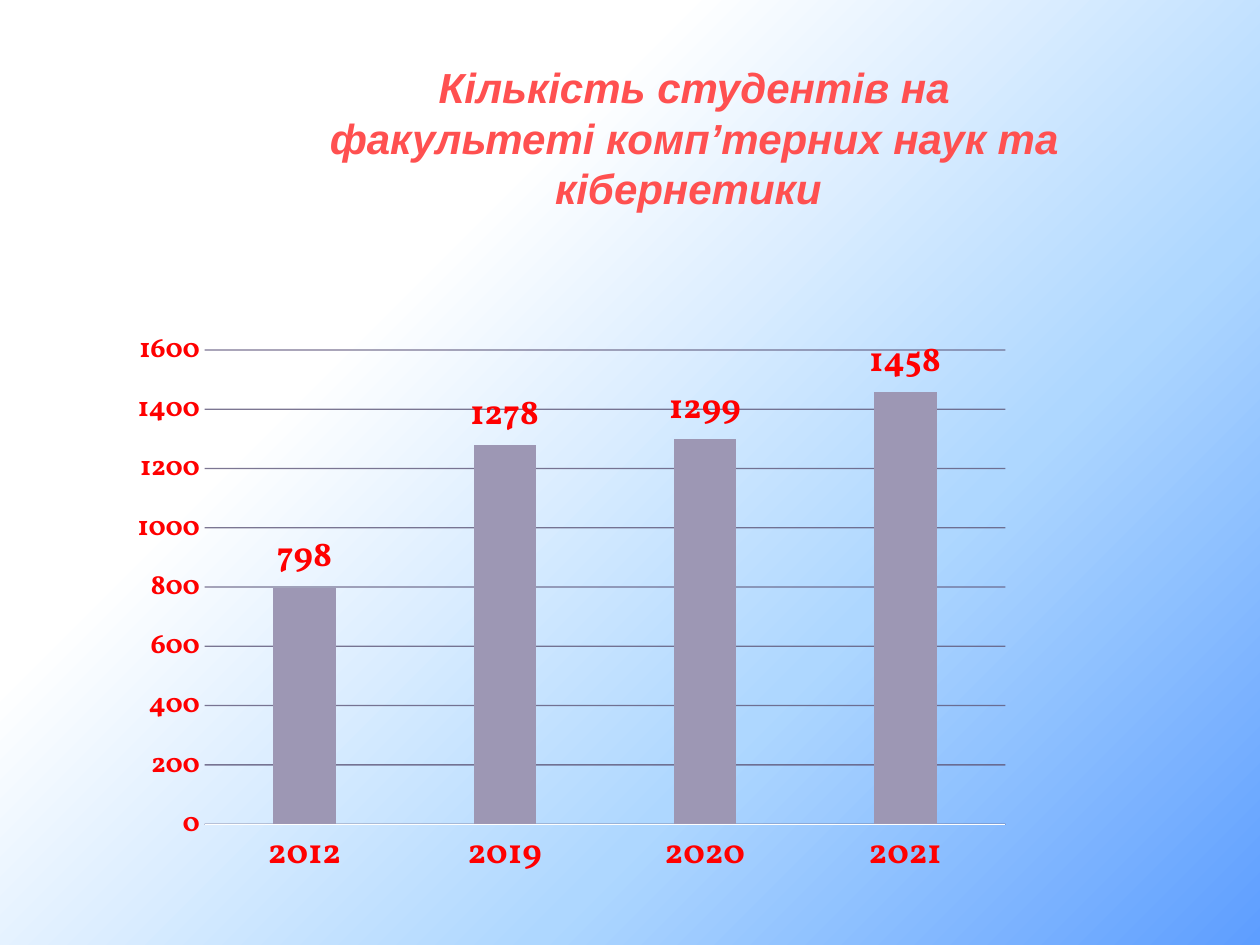
from lxml import etree
from pptx import Presentation
from pptx.chart.data import CategoryChartData
from pptx.dml.color import RGBColor
from pptx.enum.chart import XL_CHART_TYPE, XL_LABEL_POSITION, XL_TICK_MARK
from pptx.enum.text import MSO_ANCHOR, MSO_AUTO_SIZE, PP_ALIGN
from pptx.oxml import parse_xml
from pptx.oxml.ns import qn
from pptx.util import Cm, Pt

COLUMN_CLUSTERED = XL_CHART_TYPE.COLUMN_CLUSTERED
OUTSIDE_END = XL_LABEL_POSITION.OUTSIDE_END
NO_TICK = XL_TICK_MARK.NONE
TOP = MSO_ANCHOR.TOP
CENTER = PP_ALIGN.CENTER
GROW = MSO_AUTO_SIZE.SHAPE_TO_FIT_TEXT

RED = RGBColor(0xFF, 0x00, 0x00)
CORAL = RGBColor(0xFF, 0x50, 0x50)
LILAC = RGBColor(0x9D, 0x97, 0xB4)
GRID = RGBColor(0x60, 0x59, 0x7B)
WHITE = RGBColor(0xFF, 0xFF, 0xFF)
SKY = RGBColor(0xAE, 0xD7, 0xFF)
BLUE = RGBColor(0x5E, 0x9E, 0xFF)
GRADIENT_STOPS = [(0, BLUE, 52), (33, SKY, 70), (69, WHITE, 100), (100, WHITE, 0)]
PLOT_LAYOUT = {"x": 0.078, "y": 0.195, "w": 0.878, "h": 0.721}
DRAWING_NAMESPACE = "http://schemas.openxmlformats.org/drawingml/2006/main"


def format_font(font, name="Vollkorn", size=16, color=RED, italic=False):
    font.name = name
    font.size = Pt(size)
    font.color.rgb = color
    font.bold = True
    font.italic = italic


presentation = Presentation()
presentation.slide_width = Cm(25.4)
presentation.slide_height = Cm(19.05)
slide = presentation.slides.add_slide(presentation.slide_layouts[5])

slide.background.fill.gradient()
old_gradient = next(slide.element.iter(qn("a:gradFill")))
stops = "".join(
    f'<a:gs pos="{position * 1000}"><a:srgbClr val="{color}">'
    f'<a:alpha val="{alpha * 1000}"/></a:srgbClr></a:gs>'
    for position, color, alpha in GRADIENT_STOPS
)
gradient = parse_xml(
    f'<a:gradFill xmlns:a="{DRAWING_NAMESPACE}" rotWithShape="1"><a:gsLst>{stops}</a:gsLst>'
    '<a:path path="circle"><a:fillToRect l="100000" t="100000"/></a:path>'
    '<a:tileRect r="-100000" b="-100000"/></a:gradFill>'
)
old_gradient.getparent().replace(old_gradient, gradient)

chart_data = CategoryChartData()
chart_data.categories = ["2012", "2019", "2020", "2021"]
chart_data.add_series("Series 1", [798, 1278, 1299, 1458])
chart = slide.shapes.add_chart(
    COLUMN_CLUSTERED, Cm(2.69), Cm(4.47), Cm(18.39), Cm(13.26), chart_data
).chart
format_font(chart.font)
chart.has_title = False
chart.has_legend = False

plot = chart.plots[0]
plot.vary_by_categories = False
plot.gap_width = 219
plot.overlap = -27
series = plot.series[0]
series.format.fill.solid()
series.format.fill.fore_color.rgb = LILAC
labels = series.data_labels
labels.show_value = True
labels.position = OUTSIDE_END
format_font(labels.font, size=20)

for axis, size in [(chart.category_axis, 20), (chart.value_axis, 16)]:
    axis.major_tick_mark = NO_TICK
    axis.minor_tick_mark = NO_TICK
    format_font(axis.tick_labels.font, size=size)

category_line = chart.category_axis.format.line
category_line.color.rgb = WHITE
category_line.width = Pt(0.75)

value_axis = chart.value_axis
value_axis.minimum_scale = 0
value_axis.maximum_scale = 1600
value_axis.major_unit = 200
value_axis.format.line.fill.background()
value_axis.has_major_gridlines = True
grid_line = value_axis.major_gridlines.format.line
grid_line.color.rgb = GRID
grid_line.width = Pt(0.75)
gridlines = next(chart.element.iter(qn("c:majorGridlines")))
grid_color = next(gridlines.iter(qn("a:srgbClr")))
etree.SubElement(grid_color, qn("a:alpha")).set("val", "81000")

plot_area = next(chart.element.iter(qn("c:plotArea")))
for old_layout in plot_area.findall(qn("c:layout")):
    plot_area.remove(old_layout)
layout = etree.Element(qn("c:layout"))
manual_layout = etree.SubElement(layout, qn("c:manualLayout"))
settings = {"layoutTarget": "inner", "xMode": "edge", "yMode": "edge", **PLOT_LAYOUT}
for name, value in settings.items():
    etree.SubElement(manual_layout, qn(f"c:{name}")).set("val", str(value))
plot_area.insert(0, layout)

title = slide.shapes.title
title.left, title.top = Cm(5.89), Cm(1.12)
title.width, title.height = Cm(16.21), Cm(3.33)
title_frame = title.text_frame
title_frame.word_wrap = True
title_frame.auto_size = GROW
title_frame.vertical_anchor = TOP
paragraph = title_frame.paragraphs[0]
paragraph.alignment = CENTER
run = paragraph.add_run()
run.text = "Кількість студентів на факультеті комп’терних наук та кібернетики "
format_font(run.font, name="Arial", size=24, color=CORAL, italic=True)

presentation.save("out.pptx")
